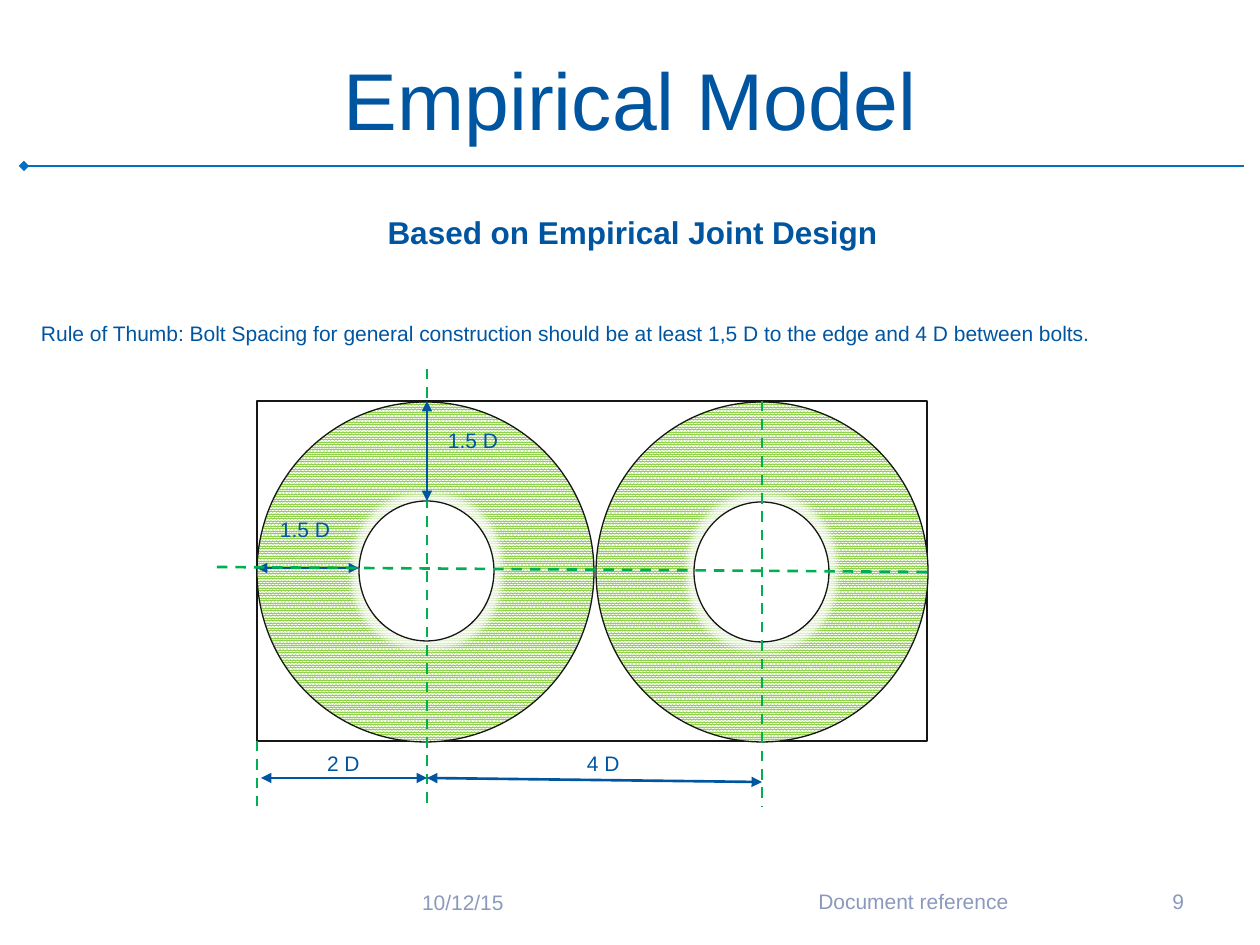
from typing import NamedTuple

from lxml.etree import SubElement
from pptx import Presentation
from pptx.dml.color import RGBColor
from pptx.enum.dml import MSO_LINE_DASH_STYLE as Dash, MSO_PATTERN_TYPE as Pattern
from pptx.enum.shapes import MSO_CONNECTOR_TYPE as Connector, MSO_SHAPE as Preset
from pptx.enum.text import MSO_ANCHOR as Anchor, PP_ALIGN as Align
from pptx.oxml.ns import qn
from pptx.util import Emu, Pt

EMU_PER_PX = 914400 / 126


class Theme(NamedTuple):
    font: str = "Arial"
    white: str = "FFFFFF"
    text: str = "0055A0"
    footer: str = "8C99BE"
    rule: str = "0070C0"
    outline: str = "161616"
    material: str = "92D050"
    center_line: str = "00B050"
    title_size: int = 46
    subtitle_size: int = 18
    body_size: int = 12
    outline_width: float = 0.75
    line_width: float = 1.5
    glow_px: int = 14


THEME = Theme()


class Box(NamedTuple):
    left: int
    top: int
    width: int
    height: int


class Label(NamedTuple):
    text: str
    box: Box
    size: int = THEME.body_size
    color: str = THEME.text
    align: Align = Align.LEFT
    anchor: Anchor = Anchor.TOP
    bold: bool = False
    side_inset: int = 13


class Line(NamedTuple):
    x1: int
    y1: int
    x2: int
    y2: int


class Washer(NamedTuple):
    ring: Box
    hole: Box


LABELS = [
    Label("Empirical Model", Box(63, 33, 1134, 130), THEME.title_size,
          align=Align.CENTER, anchor=Anchor.MIDDLE, side_inset=6),
    Label("Based on Empirical Joint Design ", Box(77, 207, 1120, 50),
          THEME.subtitle_size, align=Align.CENTER, bold=True),
    Label("Rule of Thumb: Bolt Spacing for general construction should be "
          "at least 1,5 D to the edge and 4 D between bolts.",
          Box(28, 315, 1203, 38)),
    Label("1.5 D", Box(267, 511, 84, 38)),
    Label("1.5 D", Box(435, 422, 84, 38)),
    Label("2 D", Box(314, 745, 84, 38)),
    Label("4 D", Box(574, 745, 84, 38)),
    Label("10/12/15", Box(409, 877, 294, 50),
          color=THEME.footer, anchor=Anchor.MIDDLE),
    Label("Document reference", Box(714, 876, 399, 50), color=THEME.footer,
          align=Align.CENTER, anchor=Anchor.MIDDLE),
    Label("9", Box(1128, 876, 69, 50), color=THEME.footer,
          align=Align.RIGHT, anchor=Anchor.MIDDLE),
]
PLATE = Box(257, 401, 670, 340)
WASHERS = [
    Washer(Box(257, 402, 337, 340), Box(359, 501, 135, 140)),
    Washer(Box(596, 402, 332, 340), Box(694, 502, 135, 140)),
]
TITLE_RULE = Line(24, 166, 1244, 166)
BOLT_AXES = [Line(427, 369, 427, 806), Line(762, 401, 762, 806)]
DIMENSIONS = [
    Line(257, 568, 359, 568),
    Line(427, 401, 427, 501),
    Line(261, 778, 427, 778),
    Line(427, 778, 762, 782),
]
ROW_AXIS = Line(217, 567, 927, 572)
EDGE_EXTENSION = Line(257, 741, 257, 806)


def px(value: int) -> Emu:
    return Emu(round(value * EMU_PER_PX))


def rgb(color: str) -> RGBColor:
    return RGBColor.from_string(color)


def add_label(slide, label: Label) -> None:
    frame = slide.shapes.add_textbox(*map(px, label.box)).text_frame
    frame.word_wrap = True
    frame.vertical_anchor = label.anchor
    frame.margin_left = frame.margin_right = px(label.side_inset)
    frame.margin_top = frame.margin_bottom = px(6)
    paragraph = frame.paragraphs[0]
    paragraph.alignment = label.align
    run = paragraph.add_run()
    run.text = label.text
    run.font.name = THEME.font
    run.font.size = Pt(label.size)
    run.font.bold = label.bold
    run.font.color.rgb = rgb(label.color)


def add_outlined(slide, preset: Preset, box: Box):
    """Add a white preset shape with the thin dark outline."""
    shape = slide.shapes.add_shape(preset, *map(px, box))
    shape.shadow.inherit = False
    shape.fill.solid()
    shape.fill.fore_color.rgb = rgb(THEME.white)
    shape.line.color.rgb = rgb(THEME.outline)
    shape.line.width = Pt(THEME.outline_width)
    return shape


def add_glow(shape) -> None:
    effects = shape.element.spPr.find(qn("a:effectLst"))
    glow = SubElement(effects, qn("a:glow"), rad=str(px(THEME.glow_px)))
    color = SubElement(glow, qn("a:srgbClr"), val=THEME.white)
    SubElement(color, qn("a:alpha"), val="75000")


def add_washer(slide, washer: Washer) -> None:
    ring = add_outlined(slide, Preset.OVAL, washer.ring)
    ring.fill.patterned()
    ring.fill.pattern = Pattern.PERCENT_90
    ring.fill.fore_color.rgb = rgb(THEME.material)
    ring.fill.back_color.rgb = rgb(THEME.white)
    add_glow(add_outlined(slide, Preset.OVAL, washer.hole))


def add_line(slide, line: Line, color: str, dashed: bool = False,
             head: str = "", tail: str = "") -> None:
    connector = slide.shapes.add_connector(Connector.STRAIGHT, *map(px, line))
    connector.line.color.rgb = rgb(color)
    connector.line.width = Pt(THEME.line_width)
    if dashed:
        connector.line.dash_style = Dash.DASH
    properties = connector.element.spPr
    outline = properties.find(qn("a:ln"))
    for tag, kind in (("a:headEnd", head), ("a:tailEnd", tail)):
        if kind:
            SubElement(outline, qn(tag), type=kind)
    SubElement(properties, qn("a:effectLst"))


def main() -> None:
    presentation = Presentation()
    presentation.slide_width, presentation.slide_height = px(1260), px(945)
    slide = presentation.slides.add_slide(presentation.slide_layouts[6])

    add_line(slide, TITLE_RULE, THEME.rule, head="diamond")
    add_outlined(slide, Preset.RECTANGLE, PLATE)
    for washer in WASHERS:
        add_washer(slide, washer)
    for axis in BOLT_AXES:
        add_line(slide, axis, THEME.center_line, dashed=True)
    for dimension in DIMENSIONS:
        add_line(slide, dimension, THEME.text, head="triangle", tail="triangle")
    for line in (ROW_AXIS, EDGE_EXTENSION):
        add_line(slide, line, THEME.center_line, dashed=True)
    for label in LABELS:
        add_label(slide, label)

    presentation.save("out.pptx")


if __name__ == "__main__":
    main()
